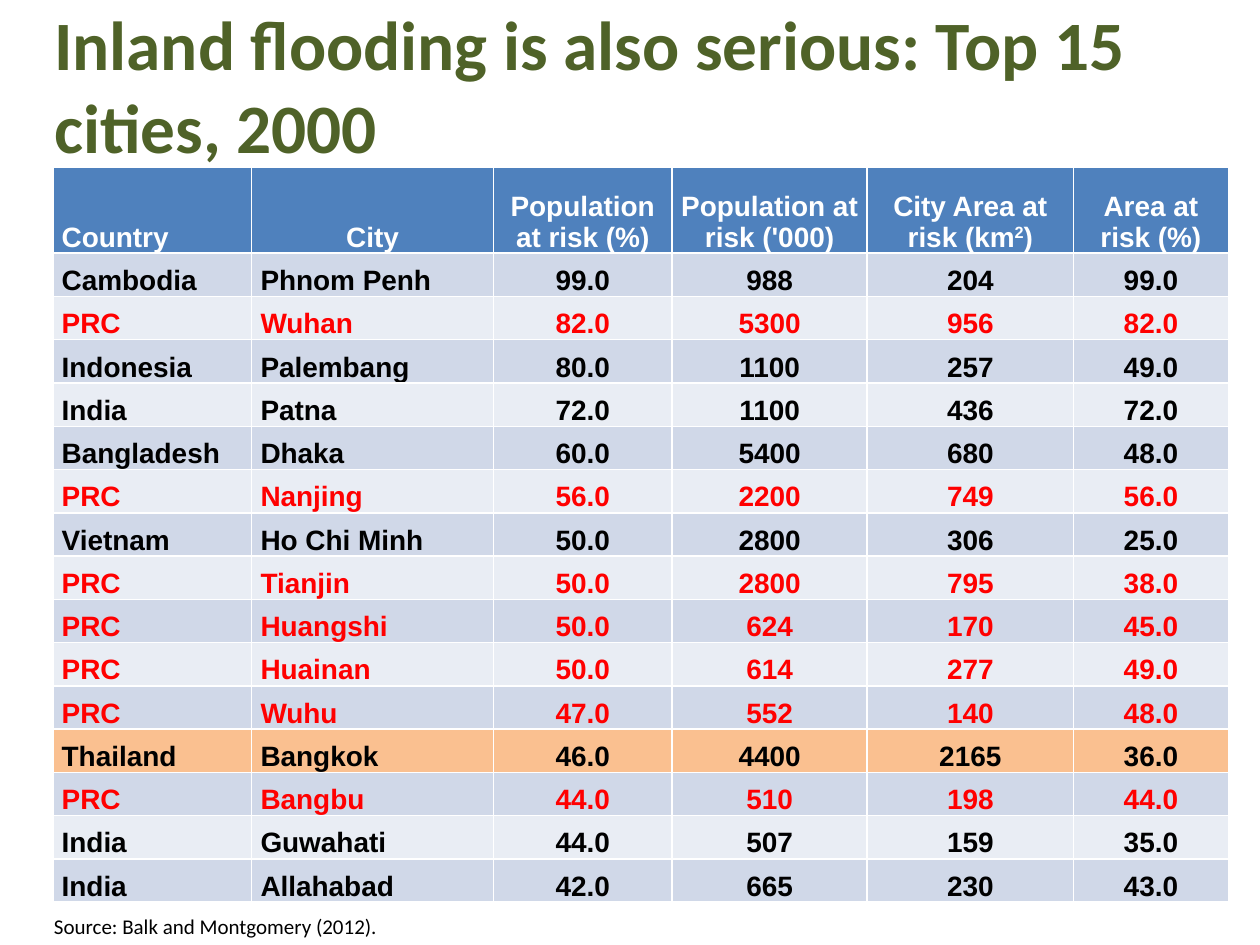
from pptx import Presentation
from pptx.dml.color import RGBColor as RGB
from pptx.enum.text import MSO_ANCHOR as Anchor, MSO_AUTO_SIZE as Fit, PP_ALIGN as Align
from pptx.util import Inches, Pt

COLORS = {
    "title": "4F6228",
    "head": "4F81BD",
    "odd": "D0D8E8",
    "even": "E9EDF4",
    "mark": "FAC090",
    "white": "FFFFFF",
    "black": "000000",
    "red": "FF0000",
}
HEADS = ["Country", "City", "Population at risk (%)", "Population at risk ('000)",
         "City Area at risk (km²)", "Area at risk (%)"]
WIDTHS = [1.58, 1.92, 1.42, 1.55, 1.64, 1.23]
CITIES = [
    ("Cambodia", "Phnom Penh", "99.0", "988", "204", "99.0"),
    ("PRC", "Wuhan", "82.0", "5300", "956", "82.0"),
    ("Indonesia", "Palembang", "80.0", "1100", "257", "49.0"),
    ("India", "Patna", "72.0", "1100", "436", "72.0"),
    ("Bangladesh", "Dhaka", "60.0", "5400", "680", "48.0"),
    ("PRC", "Nanjing", "56.0", "2200", "749", "56.0"),
    ("Vietnam", "Ho Chi Minh", "50.0", "2800", "306", "25.0"),
    ("PRC", "Tianjin", "50.0", "2800", "795", "38.0"),
    ("PRC", "Huangshi", "50.0", "624", "170", "45.0"),
    ("PRC", "Huainan", "50.0", "614", "277", "49.0"),
    ("PRC", "Wuhu", "47.0", "552", "140", "48.0"),
    ("Thailand", "Bangkok", "46.0", "4400", "2165", "36.0"),
    ("PRC", "Bangbu", "44.0", "510", "198", "44.0"),
    ("India", "Guwahati", "44.0", "507", "159", "35.0"),
    ("India", "Allahabad", "42.0", "665", "230", "43.0"),
]


def style(para, face, size, color, bold=False, align=Align.LEFT):
    para.alignment = align
    font = para.font
    font.name, font.size, font.bold = face, Pt(size), bold
    font.color.rgb = RGB.from_string(COLORS[color])


def add_title(slide, left, top, width, height):
    title = slide.shapes.title
    title.left, title.top = Inches(left), Inches(top)
    title.width, title.height = Inches(width), Inches(height)
    frame = title.text_frame
    frame.text = "Inland flooding is also serious: Top 15 cities, 2000"
    frame.auto_size = Fit.NONE
    frame.vertical_anchor = Anchor.MIDDLE
    style(frame.paragraphs[0], "Calibri", 39.6, "title", True)


def fill_cell(cell, text, fill, color, align):
    cell.fill.solid()
    cell.fill.fore_color.rgb = RGB.from_string(COLORS[fill])
    cell.vertical_anchor = Anchor.BOTTOM
    cell.margin_left = cell.margin_right = Inches(0.07)
    cell.margin_top = cell.margin_bottom = 0
    para = cell.text_frame.paragraphs[0]
    base, power, rest = text.partition("²")
    para.add_run().text = base
    if power:
        run = para.add_run()
        run.text = "2"
        run.font._element.set("baseline", "30000")
        para.add_run().text = rest
    style(para, "Arial", 16, color, True, align)


def add_cities(slide, left, top, width, height):
    head = 0.68
    table = slide.shapes.add_table(len(CITIES) + 1, len(HEADS), Inches(left), Inches(top),
                                   Inches(width), Inches(height)).table
    for col, size in zip(table.columns, WIDTHS):
        col.width = Inches(size * width / sum(WIDTHS))
    for row in table.rows:
        row.height = Inches((height - head) / len(CITIES))
    table.rows[0].height = Inches(head)

    for c, text in enumerate(HEADS):
        fill_cell(table.cell(0, c), text, "head", "white", Align.CENTER if c else Align.LEFT)
    for r, city in enumerate(CITIES, 1):
        band = "odd" if r % 2 else "even"
        fill = "mark" if city[0] == "Thailand" else band
        color = "red" if city[0] == "PRC" else "black"
        for c, text in enumerate(city):
            fill_cell(table.cell(r, c), text, fill, color, Align.CENTER if c > 1 else Align.LEFT)


def add_source(slide, left, top, width, height):
    box = slide.shapes.add_textbox(Inches(left), Inches(top), Inches(width), Inches(height))
    frame = box.text_frame
    frame.word_wrap = False
    frame.auto_size = Fit.SHAPE_TO_FIT_TEXT
    frame.text = "Source: Balk and Montgomery (2012)."
    style(frame.paragraphs[0], "Calibri", 12, "black")


def main():
    deck = Presentation()
    deck.slide_width, deck.slide_height = Inches(10), Inches(7.5)
    slide = deck.slides.add_slide(deck.slide_layouts[5])
    add_title(slide, 0.33, 0.17, 9, 1)
    add_cities(slide, 0.42, 1.33, 9.33, 5.83)
    add_source(slide, 0.33, 7.2, 2.79, 0.3)
    deck.save("out.pptx")


if __name__ == "__main__":
    main()
